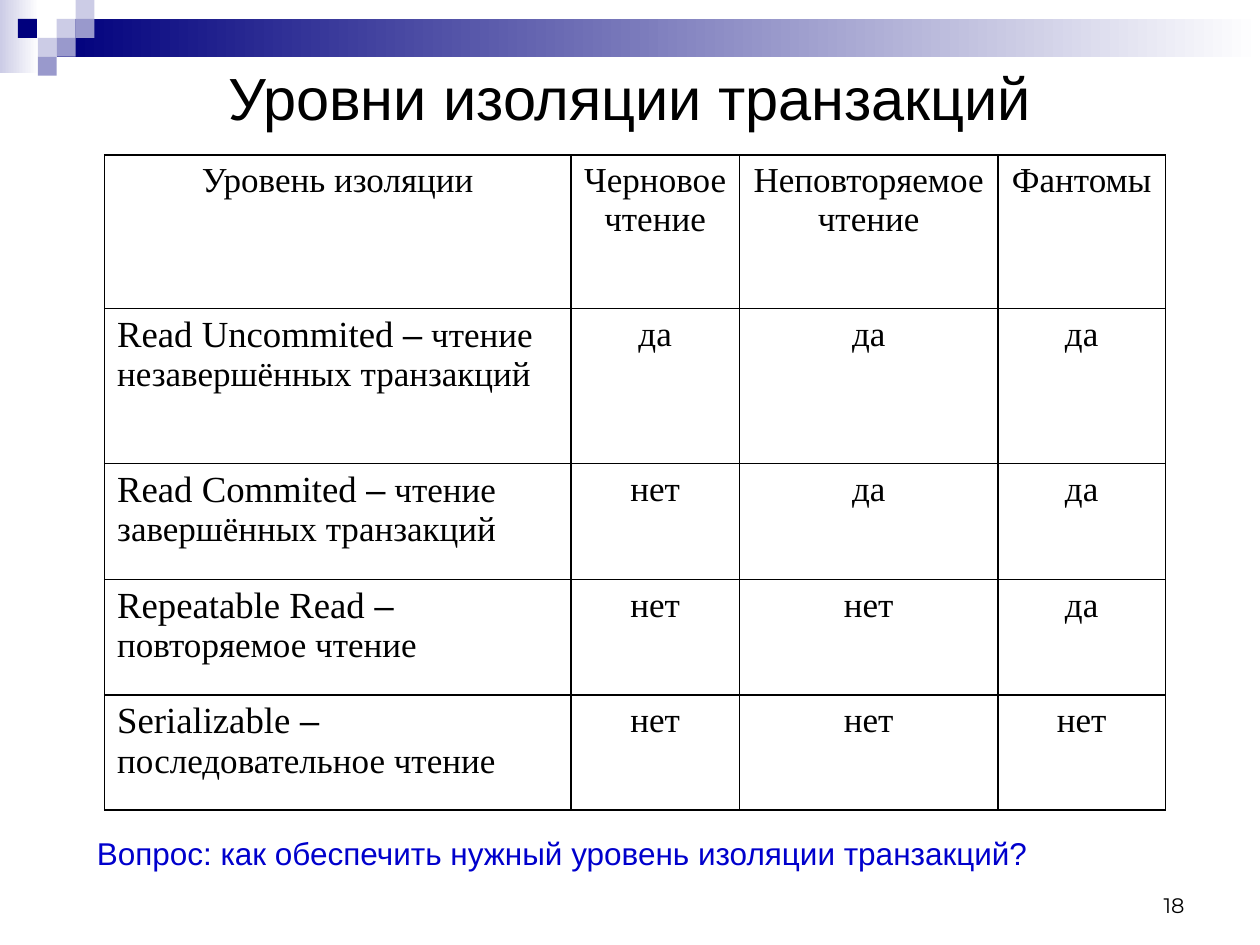
from dataclasses import dataclass
from typing import NamedTuple, Optional

from lxml import etree
from pptx import Presentation
from pptx.dml.color import RGBColor
from pptx.enum.shapes import MSO_SHAPE
from pptx.enum.text import MSO_ANCHOR, PP_ALIGN
from pptx.oxml.ns import qn
from pptx.util import Emu, Inches, Pt

RECT = MSO_SHAPE.RECTANGLE
LEFT, CENTER, RIGHT = PP_ALIGN.LEFT, PP_ALIGN.CENTER, PP_ALIGN.RIGHT
TOP, MIDDLE, BOTTOM = MSO_ANCHOR.TOP, MSO_ANCHOR.MIDDLE, MSO_ANCHOR.BOTTOM

GRID_COLS, GRID_ROWS = 100, 75
CELL = Inches(10) / GRID_COLS
TILE = 1.5

SANS, SERIF, NUMBERS = "Arial", "Times New Roman", "Montserrat"
BLACK, WHITE, QUESTION_BLUE = "000000", "FFFFFF", "0000CC"
NAVY, LILAC, PALE = "00007D", "9999CC", "CCCCE6"


class Box(NamedTuple):
    col: float
    row: float
    cols: float
    rows: float


@dataclass
class Block:
    box: Box
    color: str
    fade_to: Optional[str] = None


@dataclass
class Run:
    text: str
    size: float
    font: str
    color: str = BLACK


@dataclass
class Level:
    name: str
    meaning: str
    answers: tuple


def tile(col: float, row: float, color: str) -> Block:
    return Block(Box(col * TILE, row * TILE, TILE, TILE), color)


BLOCKS = [
    Block(Box(0, 0, 3.1, 5.8), PALE, WHITE),
    Block(Box(3 * TILE, TILE, GRID_COLS - 3 * TILE, 2 * TILE), NAVY, WHITE),
    tile(3, 1, PALE), tile(4, 0, PALE), tile(4, 1, LILAC), tile(2, 2, PALE),
    tile(0.95, 1, NAVY), tile(3, 2, LILAC), tile(2, 3, LILAC),
]
TITLE = Box(5, 2.8, 90, 9.7)
TABLE = Box(8.3, 12.3, 84.3, 52)
COL_WIDTHS = [37, 13.4, 20.5, 13.3]
ROW_HEIGHTS = [12.2, 12.3, 9.2, 9.15, 9.15]
HEADERS = ["Уровень изоляции", "Черновое чтение", "Неповторяемое чтение", "Фантомы"]
LEVELS = [
    Level("Read Uncommited", "чтение незавершённых транзакций", ("да", "да", "да")),
    Level("Read Commited", "чтение завершённых транзакций", ("нет", "да", "да")),
    Level("Repeatable Read", "повторяемое чтение", ("нет", "нет", "да")),
    Level("Serializable", "последовательное чтение", ("нет", "нет", "нет")),
]


def rgb(color: str) -> RGBColor:
    return RGBColor.from_string(color)


def length(cells: float) -> Emu:
    return Emu(round(cells * CELL))


def place(box: Box) -> list:
    return [length(v) for v in box]


def write(tf, runs: list, align, anchor=None) -> None:
    p = tf.paragraphs[0]
    p.alignment = align
    if anchor is not None:
        tf.vertical_anchor = anchor
        tf.word_wrap = True
    for run in runs:
        r = p.add_run()
        r.text = run.text
        r.font.size = Pt(run.size)
        r.font.name = run.font
        r.font.color.rgb = rgb(run.color)


def draw_block(s, block: Block) -> None:
    sp = s.shapes.add_shape(RECT, *place(block.box))
    sp.shadow.inherit = False
    sp.line.fill.background()
    if block.fade_to:
        sp.fill.gradient()
        sp.fill.gradient_angle = 0
        for stop, color in zip(sp.fill.gradient_stops, (block.color, block.fade_to)):
            stop.color.rgb = rgb(color)
    else:
        sp.fill.solid()
        sp.fill.fore_color.rgb = rgb(block.color)


def draw_text(s, box: Box, run: Run, align, anchor) -> None:
    sp = s.shapes.add_textbox(*place(box))
    write(sp.text_frame, [run], align, anchor)


def set_borders(cell) -> None:
    tc_pr = cell._tc.get_or_add_tcPr()
    for i, side in enumerate(("lnL", "lnR", "lnT", "lnB")):
        ln = etree.Element(qn(f"a:{side}"), w=str(Pt(1)))
        fill = etree.SubElement(ln, qn("a:solidFill"))
        etree.SubElement(fill, qn("a:srgbClr"), val=BLACK)
        tc_pr.insert(i, ln)


def fill_cell(cell, runs: list, align) -> None:
    cell.fill.background()
    set_borders(cell)
    write(cell.text_frame, runs, align)


def draw_table(s) -> None:
    table = s.shapes.add_table(len(ROW_HEIGHTS), len(COL_WIDTHS), *place(TABLE)).table
    table.first_row = table.horz_banding = False
    for column, width in zip(table.columns, COL_WIDTHS):
        column.width = length(width)
    for row, height in zip(table.rows, ROW_HEIGHTS):
        row.height = length(height)
    for c, header in enumerate(HEADERS):
        fill_cell(table.cell(0, c), [Run(header, 20, SERIF)], CENTER)
    for r, level in enumerate(LEVELS, 1):
        runs = [Run(f"{level.name} ", 21, SERIF), Run("–", 20, SANS),
                Run(f" {level.meaning}", 20, SERIF)]
        fill_cell(table.cell(r, 0), runs, LEFT)
        for c, answer in enumerate(level.answers, 1):
            fill_cell(table.cell(r, c), [Run(answer, 20, SERIF)], CENTER)


def main() -> None:
    prs = Presentation()
    prs.slide_width, prs.slide_height = length(GRID_COLS), length(GRID_ROWS)
    s = prs.slides.add_slide(prs.slide_layouts[5])
    for block in BLOCKS:
        draw_block(s, block)
    title = s.shapes.title
    title.left, title.top, title.width, title.height = place(TITLE)
    write(title.text_frame, [Run("Уровни изоляции транзакций", 34, SANS)], CENTER, MIDDLE)
    draw_table(s)
    draw_text(s, Box(71.7, 68.3, 23.3, 5), Run("18", 12, NUMBERS), RIGHT, BOTTOM)
    question = "Вопрос: как обеспечить нужный уровень изоляции транзакций?"
    draw_text(s, Box(6.7, 65.7, 90.6, 4), Run(question, 18, SANS, QUESTION_BLUE), LEFT, TOP)
    prs.save("out.pptx")


if __name__ == "__main__":
    main()
